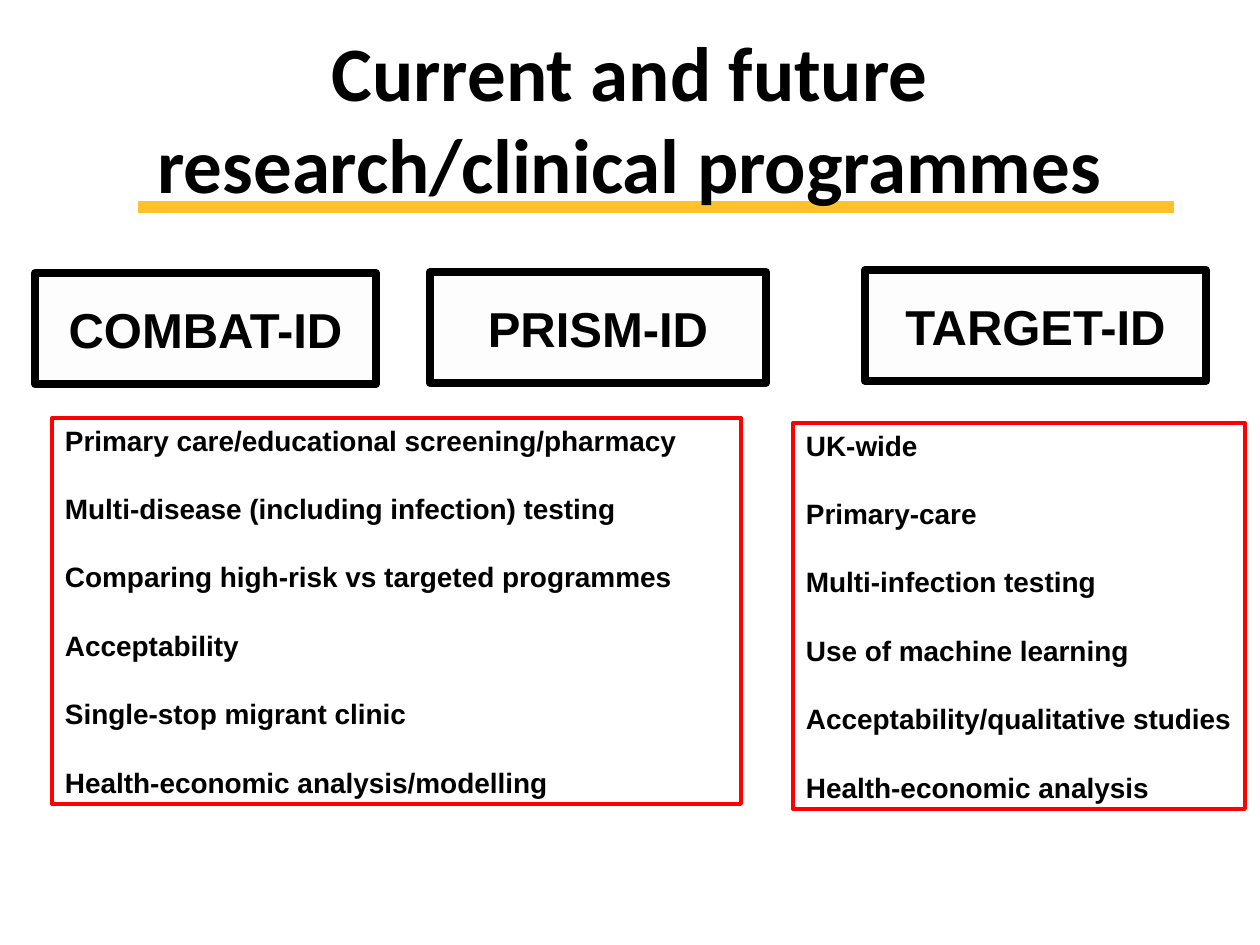
from dataclasses import dataclass

from lxml.etree import SubElement
from pptx import Presentation
from pptx.dml.color import RGBColor
from pptx.enum.shapes import MSO_CONNECTOR as Connector, MSO_SHAPE as Shape
from pptx.enum.text import MSO_ANCHOR as Anchor, MSO_AUTO_SIZE as AutoSize, PP_ALIGN as Align
from pptx.oxml.ns import qn
from pptx.util import Emu, Pt

EMU_PER_PX = 914400 // 126
BLACK, RED, AMBER, OFF_WHITE = "000000", "FF0000", "FFC229", "FDFDFD"


@dataclass
class Box:
    left: int
    top: int
    width: int
    height: int
    lines: list[str]


@dataclass
class BoxStyle:
    fill: str | None
    line: str
    line_width: float
    font_size: int
    align: Align
    gap: float
    inset_x: int
    inset_y: int


HEADING = BoxStyle(OFF_WHITE, BLACK, 4.5, 28, Align.CENTER, 0, 30, 25)
DETAIL = BoxStyle(None, RED, 2.25, 16, Align.LEFT, 19.9, 13, 6)

HEADINGS = [
    Box(35, 273, 341, 111, ["COMBAT-ID"]),
    Box(430, 272, 336, 111, ["PRISM-ID"]),
    Box(865, 270, 341, 111, ["TARGET-ID"]),
]
DETAILS = [
    Box(52, 418, 689, 386, [
        "Primary care/educational screening/pharmacy",
        "Multi-disease (including infection) testing",
        "Comparing high-risk vs targeted programmes",
        "Acceptability",
        "Single-stop migrant clinic",
        "Health-economic analysis/modelling",
    ]),
    Box(793, 423, 452, 386, [
        "UK-wide",
        "Primary-care",
        "Multi-infection testing",
        "Use of machine learning",
        "Acceptability/qualitative studies",
        "Health-economic analysis",
    ]),
]


def px(value: int) -> Emu:
    return Emu(value * EMU_PER_PX)


def color(value: str) -> RGBColor:
    return RGBColor.from_string(value)


def apply(target, formats: dict) -> None:
    for name, value in formats.items():
        setattr(target, name, value)


def format_font(font, name: str, size: int) -> None:
    apply(font, {"name": name, "size": Pt(size), "bold": True})
    font.color.rgb = color(BLACK)


def add_title(slide, text: str):
    title = slide.shapes.title
    apply(title, {"left": px(63), "top": px(38), "width": px(1134), "height": px(158)})
    frame = title.text_frame
    frame.text = text
    apply(frame, {"vertical_anchor": Anchor.MIDDLE, "word_wrap": True, "auto_size": AutoSize.NONE})
    paragraph = frame.paragraphs[0]
    paragraph.alignment = Align.CENTER
    format_font(paragraph.runs[0].font, "Calibri", 44)
    return title


def add_rule_behind(slide, title) -> None:
    rule = slide.shapes.add_connector(Connector.STRAIGHT, px(138), px(207), px(1174), px(207))
    rule.line.color.rgb = color(AMBER)
    rule.line.width = Pt(7.25)
    SubElement(rule.element.spPr, qn("a:effectLst"))
    title.element.addprevious(rule.element)


def add_box(slide, box: Box, style: BoxStyle) -> None:
    shape = slide.shapes.add_shape(
        Shape.RECTANGLE, px(box.left), px(box.top), px(box.width), px(box.height))
    shape.shadow.inherit = False
    if style.fill:
        shape.fill.solid()
        shape.fill.fore_color.rgb = color(style.fill)
    else:
        shape.fill.background()
    shape.line.color.rgb = color(style.line)
    shape.line.width = Pt(style.line_width)

    frame = shape.text_frame
    apply(frame, {
        "margin_left": px(style.inset_x), "margin_right": px(style.inset_x),
        "margin_top": px(style.inset_y), "margin_bottom": px(style.inset_y),
        "vertical_anchor": Anchor.MIDDLE, "word_wrap": True,
    })
    for index, text in enumerate(box.lines):
        paragraph = frame.add_paragraph() if index else frame.paragraphs[0]
        paragraph.alignment = style.align
        paragraph.space_before = Pt(style.gap if index else 0)
        run = paragraph.add_run()
        run.text = text
        format_font(run.font, "Arial", style.font_size)


def main() -> None:
    presentation = Presentation()
    apply(presentation, {"slide_width": px(1260), "slide_height": px(945)})
    slide = presentation.slides.add_slide(presentation.slide_layouts[5])

    # Title over its amber rule
    title = add_title(slide, "Current and future research/clinical programmes")
    add_rule_behind(slide, title)

    # Programme names and what each covers
    for boxes, style in ((HEADINGS, HEADING), (DETAILS, DETAIL)):
        for box in boxes:
            add_box(slide, box, style)

    presentation.save("out.pptx")


if __name__ == "__main__":
    main()
